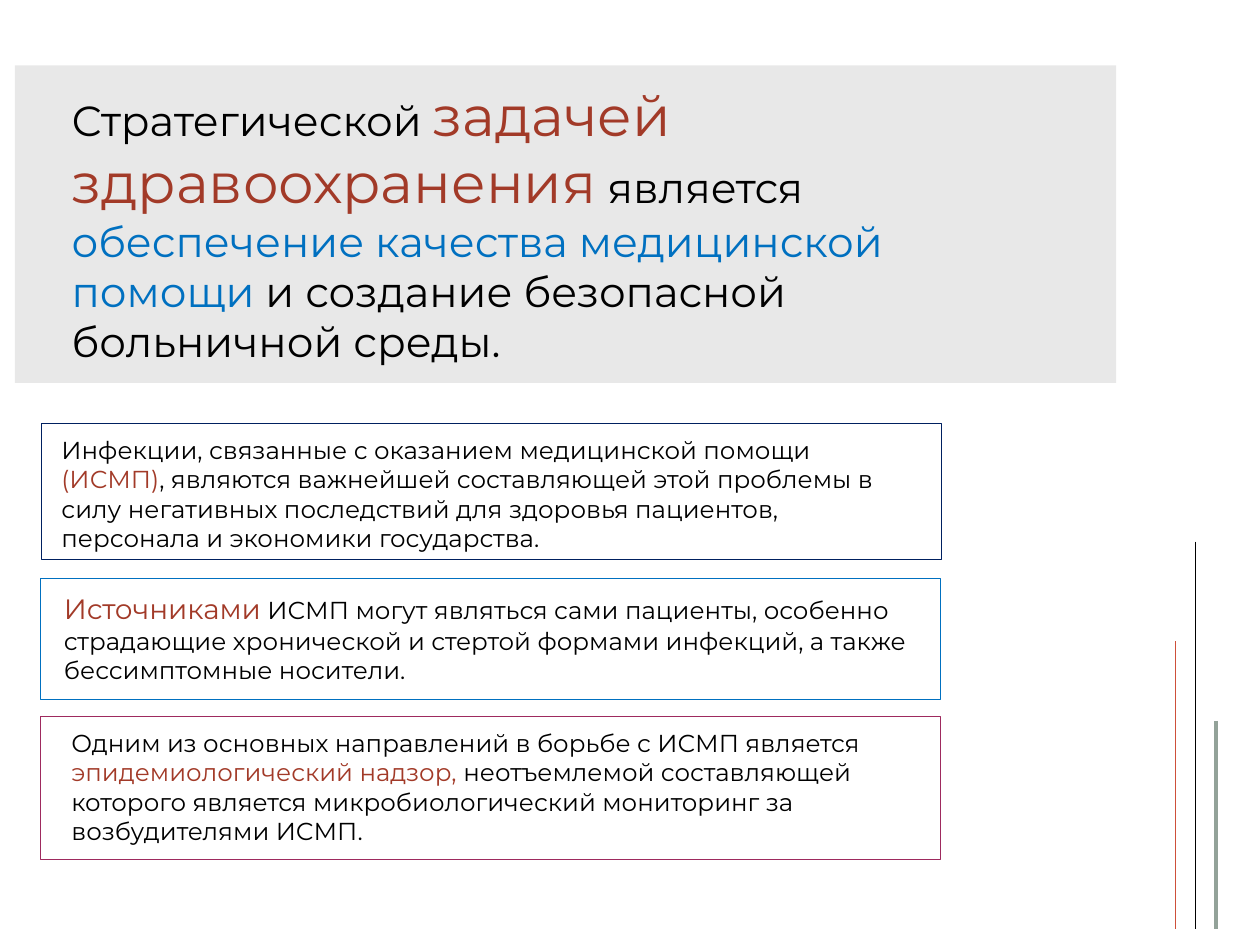
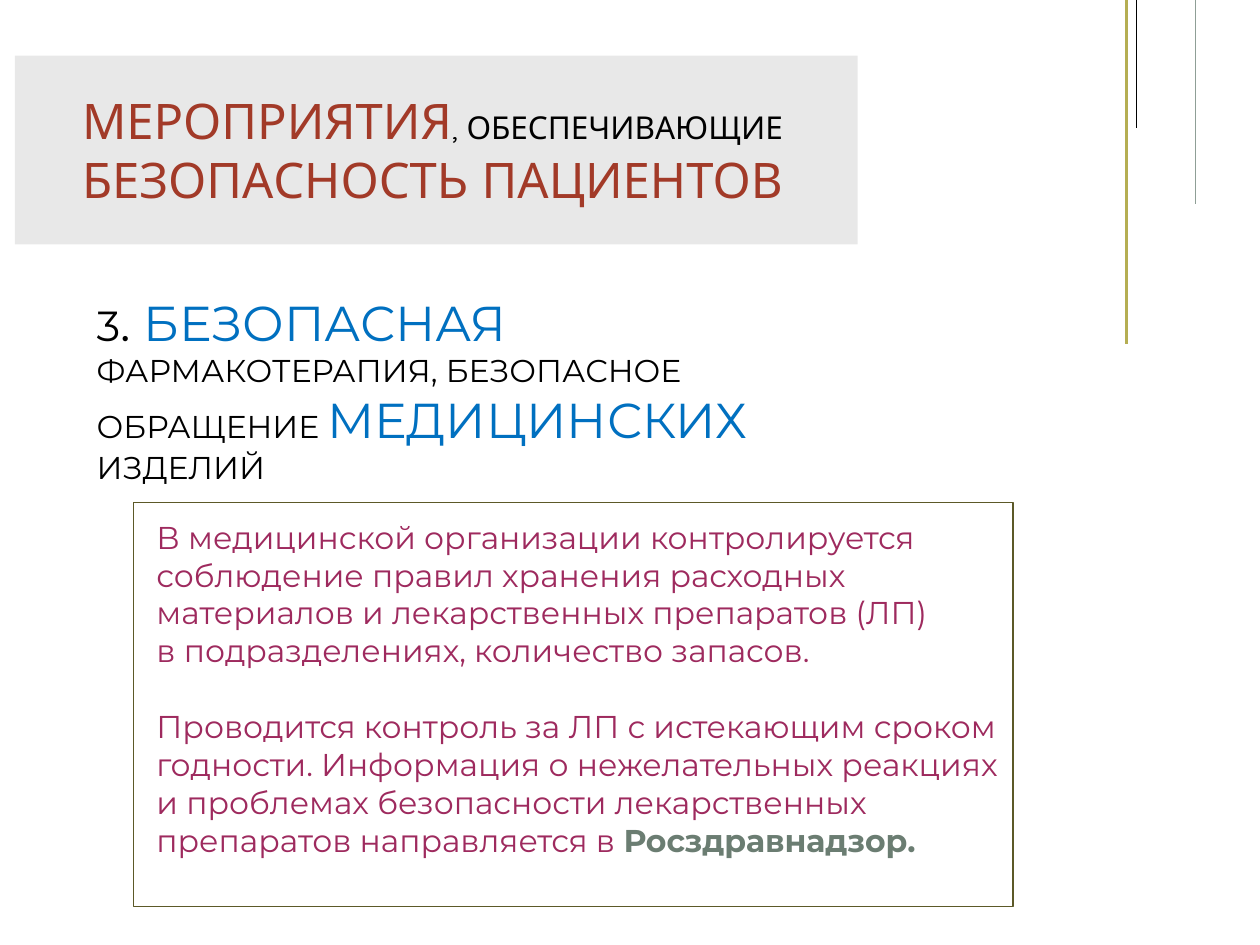
"""Build two slides on patient safety and healthcare-associated infections."""
import pptx
import pptx.dml.color
import pptx.enum.shapes
import pptx.enum.text
import pptx.oxml
import pptx.oxml.ns
import pptx.util
from pptx.util import Cm

BLACK, RUST, BLUE = "000000", "A23A28", "0070C0"
PLUM, SAGE, NAVY, OLIVE = "9E2A5E", "6B7D72", "002060", "5C5928"
TITLE_ONLY, TITLE_AND_BODY = 5, 1
BAND_LEFT, BAND_OPACITY = 0.3, 9000

PAGES = [
    {
        "layout": TITLE_ONLY,
        "font": "Montserrat",
        "band": (1.32, 22.2, 6.4),
        "title_box": (1.19, 1.5, 20.4, 6.07),
        "title": [[
            ("Стратегической ", 24, BLACK),
            ("задачей здравоохранения", 32, RUST),
            (" является ", 24, BLACK),
            ("обеспечение качества медицинской помощи ", 24, BLUE),
            ("и создание безопасной больничной среды.", 24, BLACK),
        ]],
        "texts": [
            ((0.99, 8.64, 17.81, 2.64), [[
                ("Инфекции, связанные с оказанием медицинской помощи ", 14, BLACK),
                ("(ИСМП)", 14, RUST),
                (", являются важнейшей составляющей этой проблемы в силу "
                 "негативных последствий для здоровья пациентов, персонала "
                 "и экономики государства.", 14, BLACK),
            ]]),
            ((1.04, 11.81, 17.75, 2.13), [[
                ("Источниками", 16, RUST),
                (" ИСМП могут являться сами пациенты, особенно страдающие "
                 "хронической и стертой формами инфекций, а также "
                 "бессимптомные носители.", 14, BLACK),
            ]]),
            ((1.19, 14.55, 16.99, 2.64), [[
                ("Одним из основных направлений в борьбе с ИСМП является ",
                 14, BLACK),
                ("эпидемиологический надзор, ", 14, RUST),
                ("неотъемлемой составляющей которого является "
                 "микробиологический мониторинг за возбудителями ИСМП.",
                 14, BLACK),
            ]]),
        ],
        "frames": [
            ((0.84, 8.53, 18.14, 2.74), NAVY, 0.25),
            ((0.81, 11.66, 18.14, 2.44), BLUE, 0.25),
            ((0.81, 14.43, 18.14, 2.9), PLUM, 0.25),
        ],
        "rules": [
            (24.1, 10.92, 18.72, BLACK, 0.75),
            (24.51, 14.53, 18.72, "93A299", 2),
            (23.7, 12.93, 18.72, "CE503A", 0.75),
        ],
    },
    {
        "layout": TITLE_AND_BODY,
        "font": "Quicksand",
        "band": (1.12, 16.99, 3.81),
        "title_box": (1.4, 1.7, 16.99, 2.64),
        "title": [[
            ("МЕРОПРИЯТИЯ", 28, RUST),
            (", ОБЕСПЕЧИВАЮЩИЕ ", 18, BLACK),
            ("БЕЗОПАСНОСТЬ ПАЦИЕНТОВ", 28, RUST),
        ]],
        "body_box": (2.9, 10.31, 17.81, 7.95),
        "body": [
            [("В медицинской организации контролируется соблюдение правил "
              "хранения расходных материалов и лекарственных препаратов (ЛП)",
              18, PLUM)],
            [("в подразделениях, количество запасов.", 18, PLUM)],
            [("Проводится контроль за ЛП с истекающим сроком годности. "
              "Информация о нежелательных реакциях и проблемах безопасности "
              "лекарственных препаратов направляется в ", 18, PLUM),
             ("Росздравнадзор.", 18, SAGE, True)],
        ],
        "body_gaps": [0, 0, 22],
        "texts": [
            ((1.7, 5.77, 15.6, 4.19), [[
                ("3", 24, BLACK),
                (". ", 28, BLACK),
                ("БЕЗОПАСНАЯ ", 28, BLUE),
                ("ФАРМАКОТЕРАПИЯ, БЕЗОПАСНОЕ ОБРАЩЕНИЕ ", 18, BLACK),
                ("МЕДИЦИНСКИХ", 28, BLUE),
                (" ", 20, BLACK),
                ("ИЗДЕЛИЙ", 18, BLACK),
            ]]),
        ],
        "frames": [((2.69, 10.13, 17.73, 8.15), OLIVE, 0.75)],
        "rules": [
            (22.71, 6.93, 0, "B5AE53", 2),
            (24.1, 0, 4.11, "8F9F96", 0.75),
            (22.91, 0, 2.59, BLACK, 0.75),
        ],
    },
]


def colour(value):
    return pptx.dml.color.RGBColor.from_string(value)


def add_span(para, text, size=18, tint=BLACK, bold=False, font="Montserrat"):
    span = para.add_run()
    span.text = text
    span.font.name = font
    span.font.size = pptx.util.Pt(size)
    span.font.bold = bold
    span.font.color.rgb = colour(tint)


def place(box, area):
    box.left, box.top, box.width, box.height = map(Cm, area)


def write(box, paragraphs, gaps=None, font="Montserrat"):
    frame = box.text_frame
    frame.word_wrap = True
    frame.auto_size = pptx.enum.text.MSO_AUTO_SIZE.NONE
    frame.vertical_anchor = pptx.enum.text.MSO_ANCHOR.TOP
    for number, spans in enumerate(paragraphs):
        para = frame.add_paragraph() if number else frame.paragraphs[0]
        para.alignment = pptx.enum.text.PP_ALIGN.LEFT
        para.space_before = pptx.util.Pt(gaps[number] if gaps else 0)
        for span in spans:
            add_span(para, *span, font=font)


def remove_bullets(box):
    for para in box.text_frame.paragraphs:
        properties = para._p.get_or_add_pPr()
        properties.set("marL", "0")
        properties.set("indent", "0")
        properties.append(pptx.oxml.parse_xml(
            f"<a:buNone {pptx.oxml.ns.nsdecls('a')}/>"))


def add_rectangle(page, area):
    box = page.shapes.add_shape(
        pptx.enum.shapes.MSO_SHAPE.RECTANGLE, *map(Cm, area))
    box.shadow.inherit = False
    return box


def add_band(page, area):
    band = add_rectangle(page, area)
    band.fill.solid()
    band.fill.fore_color.rgb = colour(BLACK)
    band.line.fill.background()
    tint = band.element.spPr.find(".//" + pptx.oxml.ns.qn("a:srgbClr"))
    tint.append(pptx.oxml.parse_xml(
        f'<a:alpha {pptx.oxml.ns.nsdecls("a")} val="{BAND_OPACITY}"/>'))
    page.shapes.title.element.addprevious(band.element)


def draw_line(line, tint, weight):
    line.color.rgb = colour(tint)
    line.width = pptx.util.Pt(weight)


def add_frame(page, area, tint, weight):
    box = add_rectangle(page, area)
    box.fill.background()
    draw_line(box.line, tint, weight)


def add_rule(page, x, start, end, tint, weight):
    rule = page.shapes.add_connector(
        pptx.enum.shapes.MSO_CONNECTOR.STRAIGHT,
        Cm(x), Cm(start), Cm(x), Cm(end))
    draw_line(rule.line, tint, weight)
    rule.element.spPr.append(pptx.oxml.parse_xml(
        f"<a:effectLst {pptx.oxml.ns.nsdecls('a')}/>"))


def add_page(deck, content):
    page = deck.slides.add_slide(deck.slide_layouts[content["layout"]])
    add_band(page, (BAND_LEFT, *content["band"]))
    place(page.shapes.title, content["title_box"])
    write(page.shapes.title, content["title"], font=content["font"])
    if "body" in content:
        body = page.placeholders[1]
        place(body, content["body_box"])
        write(body, content["body"], gaps=content["body_gaps"])
        remove_bullets(body)
    for area, paragraphs in content["texts"]:
        write(page.shapes.add_textbox(*map(Cm, area)), paragraphs)
    for frame in content["frames"]:
        add_frame(page, *frame)
    for rule in content["rules"]:
        add_rule(page, *rule)


def main():
    deck = pptx.Presentation()
    deck.slide_width, deck.slide_height = Cm(25.4), Cm(19.05)
    for content in PAGES:
        add_page(deck, content)
    deck.save("out.pptx")


if __name__ == "__main__":
    main()
